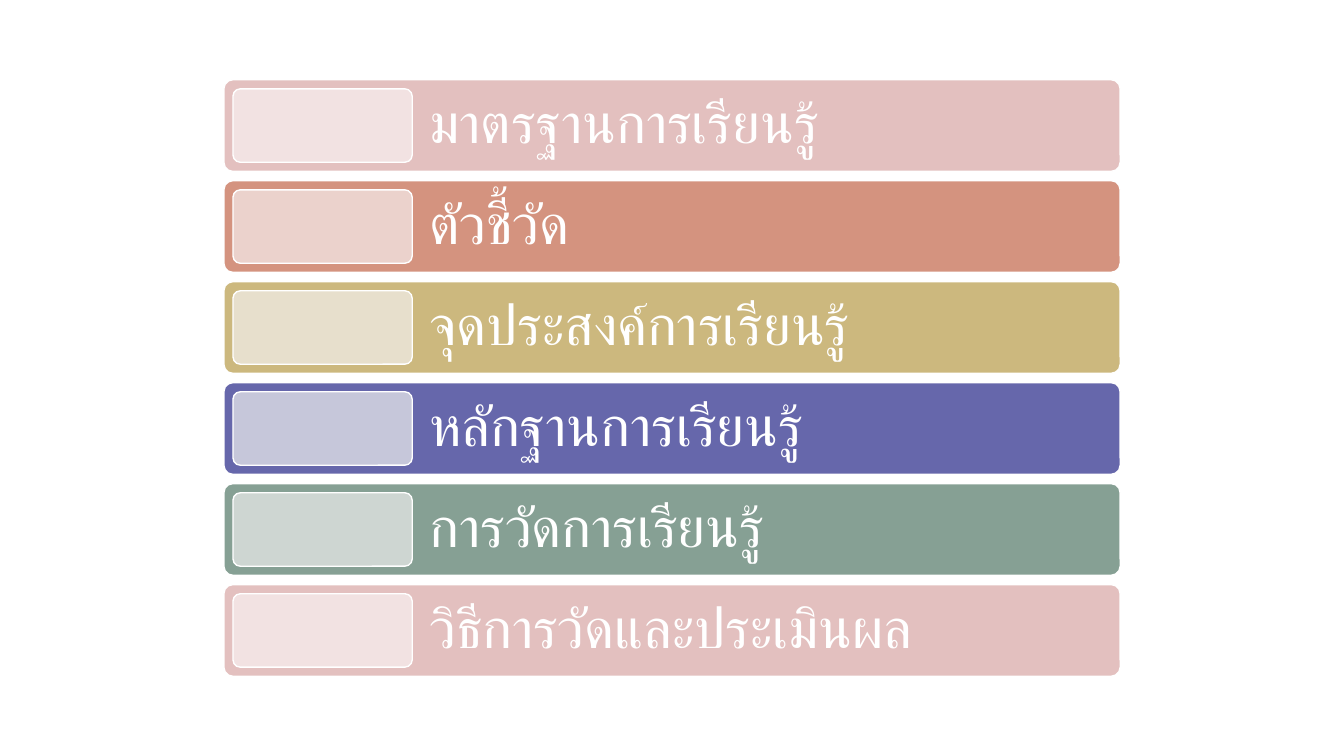
from lxml import etree
from pptx import Presentation
from pptx.dml.color import RGBColor
from pptx.enum.shapes import MSO_SHAPE
from pptx.enum.text import MSO_ANCHOR, PP_ALIGN
from pptx.oxml.ns import qn
from pptx.util import Inches, Pt

ROUNDED = MSO_SHAPE.ROUNDED_RECTANGLE
MIDDLE = MSO_ANCHOR.MIDDLE
LEFT = PP_ALIGN.LEFT

FONT = "Arial"
COLORS = {
    "white": "FFFFFF",
    "pink": "E3C0BF", "pale pink": "F2E2E2",
    "coral": "D4937F", "pale coral": "EBD2CC",
    "gold": "CCB87E", "pale gold": "E7DFCC",
    "violet": "6667AB", "pale violet": "C6C7DA",
    "green": "86A094", "pale green": "CED6D2",
}
TOPICS = [
    ("มาตรฐานการเรียนรู้", "pink"),
    ("ตัวชี้วัด", "coral"),
    ("จุดประสงค์การเรียนรู้", "gold"),
    ("หลักฐานการเรียนรู้", "violet"),
    ("การวัดการเรียนรู้", "green"),
    ("วิธีการวัดและประเมินผล", "pink"),
]


def color(name):
    return RGBColor.from_string(COLORS[name])


def add_panel(page, left, top, width, height, fill):
    panel = page.shapes.add_shape(
        ROUNDED, Inches(left), Inches(top), Inches(width), Inches(height))
    panel.adjustments[0] = 0.1
    panel.shadow.inherit = False
    panel.fill.solid()
    panel.fill.fore_color.rgb = color(fill)
    panel.line.color.rgb = color("white")
    panel.line.width = Pt(1)


def add_label(page, left, top, width, height, text):
    box = page.shapes.add_textbox(
        Inches(left), Inches(top), Inches(width), Inches(height))
    frame = box.text_frame
    frame.word_wrap = True
    frame.vertical_anchor = MIDDLE
    frame.margin_left = frame.margin_right = Inches(0.17)
    frame.margin_top = frame.margin_bottom = Inches(0.17)
    para = frame.paragraphs[0]
    para.text = text
    para.alignment = LEFT
    para.line_spacing = 0.9
    para.font.name = FONT
    para.font.size = Pt(40)
    para.font.color.rgb = color("white")
    # Thai is set in the complex-script font
    properties = para._p.pPr.find(qn("a:defRPr"))
    etree.SubElement(properties, qn("a:cs")).set("typeface", FONT)


def add_topic(page, left, top, width, height, text, fill):
    """A coloured bar with a pale tile at its left and a label beside it."""
    inset = height / 10
    tile_width = width / 5
    label_left = inset + tile_width
    add_panel(page, left, top, width, height, fill)
    add_label(page, left + label_left, top, width - label_left, height, text)
    add_panel(page, left + inset, top + inset, tile_width,
              height - 2 * inset, "pale " + fill)


def add_topic_list(page, left, top, width, height):
    # Bars are separated by a tenth of their own height
    count = len(TOPICS)
    bar_height = height / (count + (count - 1) / 10)
    for index, (text, fill) in enumerate(TOPICS):
        add_topic(page, left, top + index * bar_height * 1.1,
                  width, bar_height, text, fill)


def main():
    deck = Presentation()
    deck.slide_width = Inches(13.33)
    deck.slide_height = Inches(7.5)
    page = deck.slides.add_slide(deck.slide_layouts[6])
    add_topic_list(page, 2.22, 0.79, 8.89, 5.92)
    deck.save("out.pptx")


if __name__ == "__main__":
    main()
